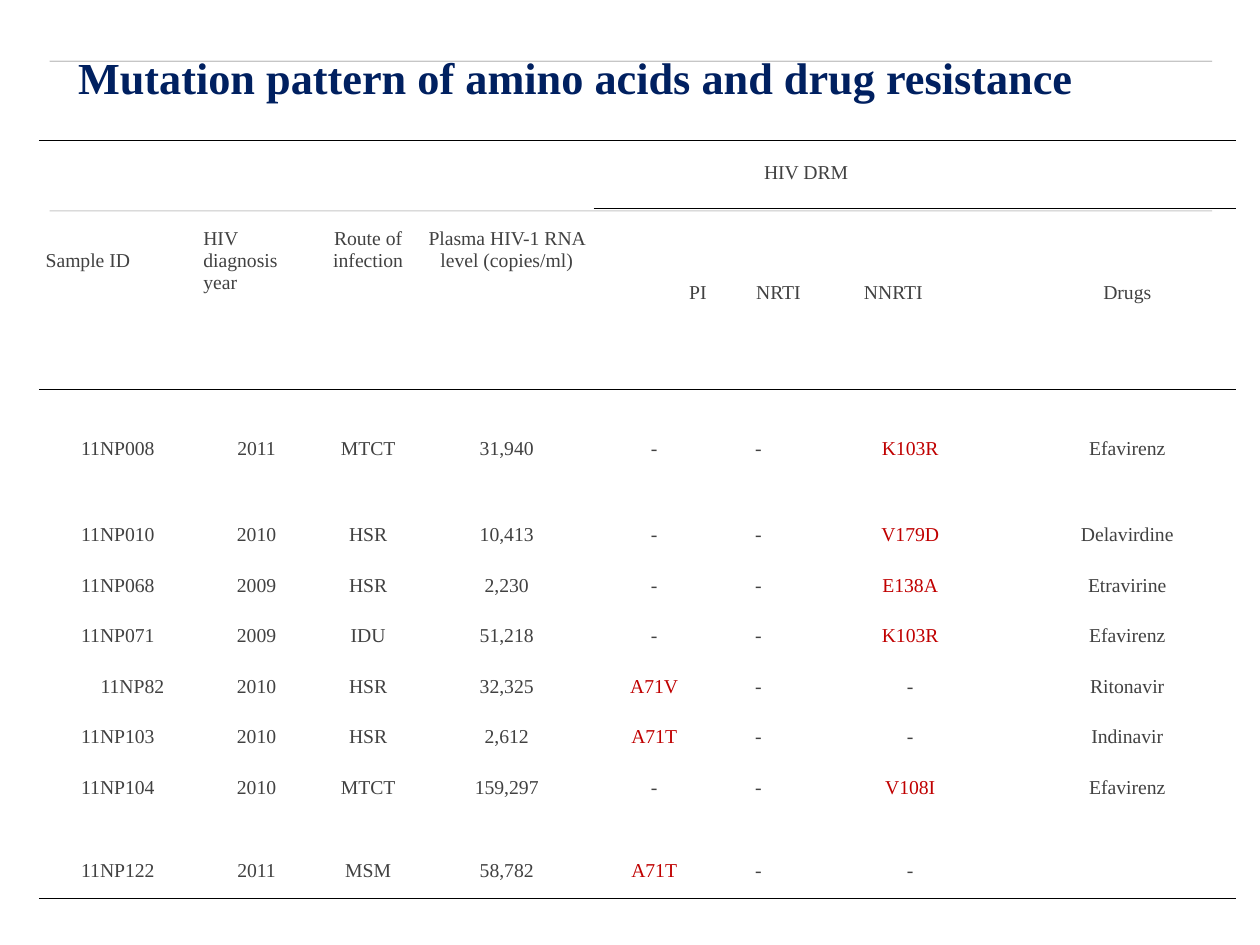
from lxml import etree
from pptx import Presentation
from pptx.dml.color import RGBColor
from pptx.enum import shapes, text
from pptx.oxml import ns
from pptx.util import Pt

TITLE = "Mutation pattern of amino acids and drug resistance"
HEADINGS = ["Sample ID", "HIV diagnosis year", "Route of\ninfection",
            "Plasma HIV-1 RNA level (copies/ml)"]
GROUP = "HIV DRM"
CLASSES = "PI\tNRTI\tNNRTI"
LAST_HEADING = "Drugs"
SAMPLES = [
    ("11NP008", "2011", "MTCT", "31,940", "-", "-", "K103R", "Efavirenz"),
    ("11NP010", "2010", "HSR", "10,413", "-", "-", "V179D", "Delavirdine"),
    ("11NP068", "2009", "HSR", "2,230", "-", "-", "E138A", "Etravirine"),
    ("11NP071", "2009", "IDU", "51,218", "-", "-", "K103R", "Efavirenz"),
    ("11NP82", "2010", "HSR", "32,325", "A71V", "-", "-", "Ritonavir"),
    ("11NP103", "2010", "HSR", "2,612", "A71T", "-", "-", "Indinavir"),
    ("11NP104", "2010", "MTCT", "159,297", "-", "-", "V108I", "Efavirenz"),
    ("11NP122", "2011", "MSM", "58,782", "A71T", "-", "-", ""),
]
INDENTED = "11NP82"
MUTATION_COLUMNS = range(4, 7)
CLASS_TABS = (54.4, 142)

FONT = "Times New Roman"
NAVY = RGBColor(0x00, 0x20, 0x60)
GREY = RGBColor(0x41, 0x41, 0x41)
RULE_GREY = RGBColor(0x44, 0x44, 0x44)
RED = RGBColor(0xC0, 0x00, 0x00)
NO_STYLE = "{2D5ABB26-0587-4C30-8999-92F81FD0307C}"

COLUMN_WIDTHS = [128.2, 97.2, 84.2, 141.1, 98.6, 70.6, 176.4, 176.4]
ROW_HEIGHTS = [55.4, 147.6, 99.4] + [41.05] * 5 + [67.7, 41.05]
LINE = 17.9
SIDE = 5.4
LEFT, CENTER = text.PP_ALIGN.LEFT, text.PP_ALIGN.CENTER


def write(frame, content, size=16, color=GREY, bold=False, align=CENTER, tabs=()):
    frame.text = content
    for para in frame.paragraphs:
        para.alignment = align
        if tabs:
            stops = etree.SubElement(para._p.get_or_add_pPr(), ns.qn("a:tabLst"))
            for position in tabs:
                etree.SubElement(stops, ns.qn("a:tab"), pos=str(Pt(position)), algn="l")
        para.font.size = Pt(size)
        for span in para.runs:
            span.font.name = FONT
            span.font.size = Pt(size)
            span.font.bold = bold
            span.font.color.rgb = color


def fill_cell(row, column, content, top, left=SIDE, **style):
    cell = grid.cell(row, column)
    cell.margin_left, cell.margin_right = Pt(left), Pt(SIDE)
    cell.margin_top, cell.margin_bottom = Pt(top), Pt(0)
    write(cell.text_frame, content, **style)


def set_borders(cell, edges):
    cell.fill.background()
    properties = cell._tc.get_or_add_tcPr()
    for position, edge in enumerate(("L", "R", "T", "B")):
        border = etree.Element(ns.qn("a:ln" + edge), w=str(Pt(1)))
        if edge in edges:
            solid = etree.SubElement(border, ns.qn("a:solidFill"))
            etree.SubElement(solid, ns.qn("a:srgbClr"), val="000000")
        else:
            etree.SubElement(border, ns.qn("a:noFill"))
        properties.insert(position, border)


deck = Presentation()
deck.slide_width, deck.slide_height = Pt(1024), Pt(768)
page = deck.slides.add_slide(deck.slide_layouts[5])

for y in (49.7, 171.4):
    rule = page.shapes.add_connector(
        shapes.MSO_CONNECTOR.STRAIGHT, Pt(40.3), Pt(y), Pt(985), Pt(y))
    rule.line.color.rgb = RULE_GREY
    rule.line.width = Pt(1)
    tint = rule._element.spPr.find(".//" + ns.qn("a:srgbClr"))
    etree.SubElement(tint, ns.qn("a:alpha"), val="30000")
    etree.SubElement(rule._element.spPr, ns.qn("a:effectLst"))

frame = page.shapes.add_table(
    len(ROW_HEIGHTS), len(COLUMN_WIDTHS), Pt(31.7), Pt(113.8),
    Pt(sum(COLUMN_WIDTHS)), Pt(sum(ROW_HEIGHTS)))
grid = frame.table
grid.first_row = grid.horz_banding = False
grid._tbl.tblPr.find(ns.qn("a:tableStyleId")).text = NO_STYLE
for column, width in zip(grid.columns, COLUMN_WIDTHS):
    column.width = Pt(width)
for row, height in zip(grid.rows, ROW_HEIGHTS):
    row.height = Pt(height)

last_row = len(ROW_HEIGHTS) - 1
for r in range(len(ROW_HEIGHTS)):
    for c in range(len(COLUMN_WIDTHS)):
        edges = {0: "T", 1: "B", 2: "T", last_row: "B"}.get(r, "")
        if r < 2 and c >= len(HEADINGS):
            edges = "TB"
        set_borders(grid.cell(r, c), edges)

for c, heading in enumerate(HEADINGS):
    grid.cell(0, c).merge(grid.cell(1, c))
    fill_cell(0, c, heading, top=LINE * (5 if c == 0 else 4),
              align=LEFT if c < 2 else CENTER)
for r in (0, 1):
    grid.cell(r, 4).merge(grid.cell(r, 6))
fill_cell(0, 4, GROUP, top=LINE)
fill_cell(1, 4, CLASSES, top=60, left=77.8, align=LEFT, tabs=CLASS_TABS)
fill_cell(1, 7, LAST_HEADING, top=60)

for r, sample in enumerate(SAMPLES, start=2):
    for c, value in enumerate(sample):
        mutated = c in MUTATION_COLUMNS and value != "-"
        fill_cell(r, c, value, top=39 if r == 2 else 9.7,
                  left=SIDE + 23.6 if value == INDENTED else SIDE,
                  color=RED if mutated else GREY)

title = page.shapes.title
title.left, title.top, title.width, title.height = Pt(56.2), Pt(41.8), Pt(881.3), Pt(63.4)
title.text_frame.vertical_anchor = text.MSO_ANCHOR.TOP
title.text_frame.auto_size = text.MSO_AUTO_SIZE.NONE
write(title.text_frame, TITLE, size=36, color=NAVY, bold=True, align=LEFT)
title.text_frame.paragraphs[0].line_spacing = 0.9
page.shapes._spTree.append(title._element)

deck.save("out.pptx")
